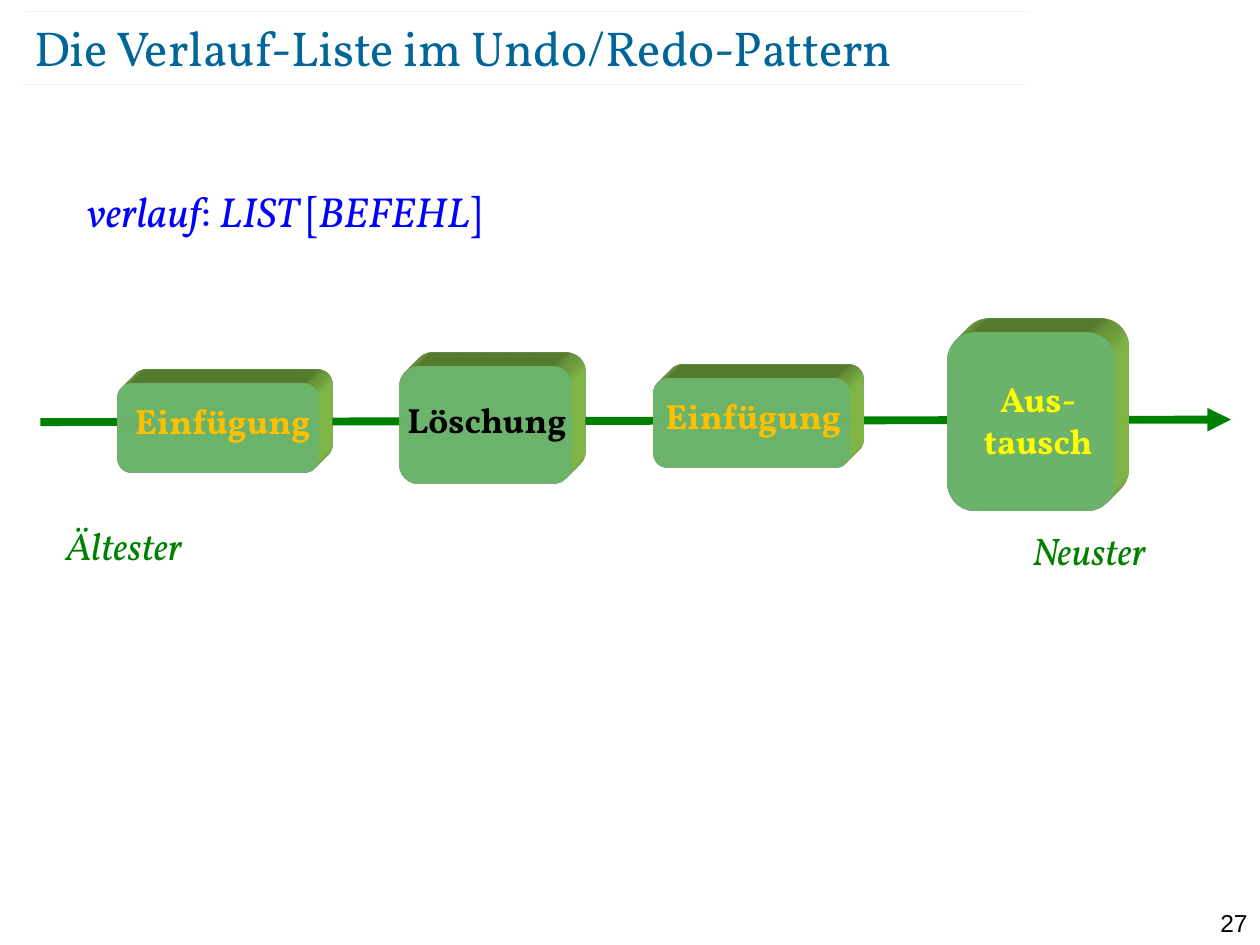
from lxml.etree import SubElement
from pptx import Presentation
from pptx.dml.color import RGBColor
from pptx.enum.shapes import MSO_CONNECTOR, MSO_SHAPE
from pptx.enum.text import MSO_ANCHOR, PP_ALIGN
from pptx.oxml import parse_xml
from pptx.oxml.ns import nsdecls, qn
from pptx.util import Inches, Pt

COLORS = {
    "title": "006699", "rule": "F2F2F2", "code": "0000FF", "time": "008000",
    "block": "99FF99", "depth": "92D050", "insert": "FFC000",
    "delete": "000000", "replace": "FFFF00", "number": "000000",
}
SERIF = "Vollkorn"
DEPTH = Inches(0.31)


def color(name):
    """Return the named colour."""
    return RGBColor.from_string(COLORS[name])


def add_text(page, box, spans, size, color_name, align=PP_ALIGN.LEFT,
             font=SERIF, bold=False):
    """Add a one-paragraph text box from (text, italic) spans."""
    shape = page.shapes.add_textbox(*map(Inches, box))
    frame = shape.text_frame
    frame.word_wrap = True
    para = frame.paragraphs[0]
    para.alignment = align
    para.font.name = font
    para.font.size = Pt(size)
    para.font.bold = bold
    para.font.color.rgb = color(color_name)
    for text, italic in spans:
        span = para.add_run()
        span.text = text
        span.font.italic = italic
    return frame


def add_line(page, start, end, color_name, width):
    """Add a straight line without shadow."""
    line = page.shapes.add_connector(
        MSO_CONNECTOR.STRAIGHT, *map(Inches, start + end))
    line.line.color.rgb = color(color_name)
    line.line.width = Pt(width)
    SubElement(line._element.spPr, qn("a:effectLst"))
    return line


def add_block(page, box):
    """Add a rounded block extruded to the upper right."""
    block = page.shapes.add_shape(MSO_SHAPE.ROUNDED_RECTANGLE, *map(Inches, box))
    block.adjustments[0] = 0.167
    block.shadow.inherit = False
    block.fill.solid()
    block.fill.fore_color.rgb = color("block")
    block.line.fill.background()
    properties = block._element.spPr
    properties.append(parse_xml(
        f'<a:scene3d {nsdecls("a")}><a:camera prst="legacyObliqueTopRight"/>'
        '<a:lightRig rig="legacyFlat3" dir="b"/></a:scene3d>'))
    properties.append(parse_xml(
        f'<a:sp3d {nsdecls("a")} extrusionH="{DEPTH}" prstMaterial="legacyMatte">'
        f'<a:extrusionClr><a:srgbClr val="{COLORS["depth"]}"/></a:extrusionClr>'
        '</a:sp3d>'))


def add_header(page, left, top, width, height):
    """Place the title between two faint rules."""
    for x, y in ((left + 0.02, top), (left, top + height)):
        add_line(page, (x, y), (x + width, y), "rule", 0.75)
    frame = add_text(page, (left + 0.09, top + 0.04, 8.69, 0.48),
                     [("Die Verlauf-Liste im Undo/Redo-Pattern", False)],
                     28, "title")
    frame.margin_left = frame.margin_right = 0
    frame.margin_top = frame.margin_bottom = 0
    frame.vertical_anchor = MSO_ANCHOR.MIDDLE


def add_declaration(page, box):
    """Place the declaration of the history list."""
    spans = [("verlauf", True), (": ", False), ("LIST", True),
             (" [", False), ("BEFEHL", True), ("]", False)]
    add_text(page, box, spans, 24, "code")


def add_timeline(page, left, top, width):
    """Place the time arrow with its commands and end labels."""
    arrow = add_line(page, (left, top), (left + width, top - 0.02), "time", 4.5)
    SubElement(arrow.line._get_or_add_ln(), qn("a:tailEnd"), type="triangle")
    commands = [
        ("Einfügung", "insert", (0.61, -0.31, 1.6, 0.71), (0.6, -0.23, 1.7, 0.48)),
        ("Löschung", "delete", (2.85, -0.44, 1.37, 0.93), (2.77, -0.24, 1.55, 0.44)),
        ("Einfügung", "insert", (4.87, -0.35, 1.55, 0.71), (4.81, -0.27, 1.7, 0.48)),
        ("Aus-tausch", "replace", (7.2, -0.71, 1.33, 1.41), (7.12, -0.4, 1.6, 0.77)),
    ]
    for text, color_name, block, label in commands:
        add_block(page, (left + block[0], top + block[1], *block[2:]))
        add_text(page, (left + label[0], top + label[1], *label[2:]),
                 [(text, False)], 20, color_name, PP_ALIGN.CENTER, bold=True)
    ends = [("Ältester", (-0.16, 0.74, 1.65, 0.47)),
            ("Neuster", (6.91, 0.78, 2.83, 0.47))]
    for text, (x, y, *size) in ends:
        add_text(page, (left + x, top + y, *size), [(text, True)],
                 22, "time", PP_ALIGN.CENTER)


def main():
    """Build and save the deck."""
    deck = Presentation()
    deck.slide_width = Inches(10)
    deck.slide_height = Inches(7.5)
    page = deck.slides.add_slide(deck.slide_layouts[6])
    add_header(page, 0.18, 0.09, 7.97, 0.58)
    add_declaration(page, (0.59, 1.42, 9.17, 0.5))
    add_timeline(page, 0.32, 3.35, 9.45)
    add_text(page, (9.45, 7.16, 0.55, 0.24), [("27", False)], 14, "number",
             PP_ALIGN.RIGHT, font="Arial")
    deck.save("out.pptx")


if __name__ == "__main__":
    main()
